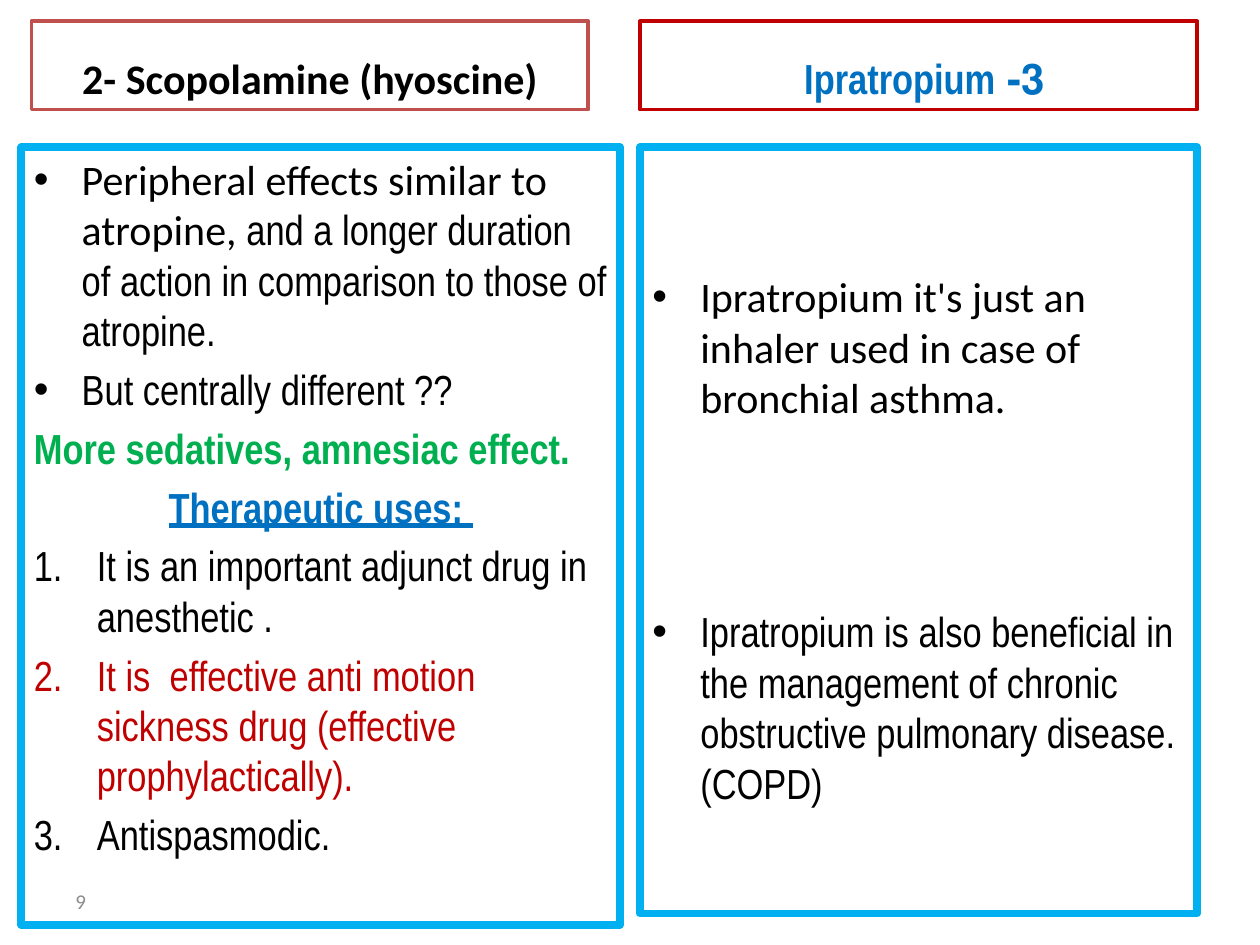
from dataclasses import dataclass

from lxml.etree import SubElement
from pptx import Presentation
from pptx.dml.color import RGBColor
from pptx.enum.shapes import MSO_SHAPE as Shape
from pptx.enum.text import MSO_ANCHOR as Anchor, PP_ALIGN as Align
from pptx.oxml.ns import qn
from pptx.util import Inches, Pt

COLORS = {"black": "000000", "blue": "0070C0", "green": "00B050", "red": "C00000",
          "sky": "00B0F0", "brick": "C0504D", "grey": "8C8C8C"}
NARROW, PLAIN = "Arial Narrow", "Calibri"


@dataclass
class Run:
    text: str
    font: str = NARROW
    color: str = "black"
    bold: bool = False
    underline: bool = False
    size: float = 24


class SlideBuilder:
    gap = 4.8
    indents = {"bullet": 0.38, "number": 0.5}

    def __init__(self, slide):
        self.slide = slide

    def frame(self, left, top, width, height, color, weight, anchor=Anchor.TOP, inset=0.05):
        """Add an unfilled outlined rectangle and return its text frame."""
        box = self.slide.shapes.add_shape(
            Shape.RECTANGLE, Inches(left), Inches(top), Inches(width), Inches(height))
        box.shadow.inherit = False
        box.fill.background()
        box.line.color.rgb = RGBColor.from_string(COLORS[color])
        box.line.width = Pt(weight)
        text = box.text_frame
        text.word_wrap = True
        text.vertical_anchor = anchor
        text.margin_top = Inches(inset)
        return text

    def header(self, left, color, run, right_to_left=False):
        text = self.frame(left, 0.17, 4.42, 0.7, color, 2.25, Anchor.BOTTOM)
        para = self.paragraph(text, [run], align=Align.CENTER)
        if right_to_left:
            para._p.get_or_add_pPr().set("rtl", "1")

    def paragraph(self, text, runs, marker=None, align=Align.LEFT, before=gap):
        first = text.paragraphs[0]
        para = text.add_paragraph() if first.runs else first
        para.alignment = align
        para.space_before = Pt(before)
        if marker:
            self.mark(para, marker)
        for run in runs:
            span = para.add_run()
            span.text = run.text
            font = span.font
            font.name, font.size = run.font, Pt(run.size)
            font.bold, font.underline = run.bold, run.underline
            font.color.rgb = RGBColor.from_string(COLORS[run.color])
        return para

    def mark(self, para, marker):
        """Give a paragraph a hanging bullet or an automatic number."""
        props = para._p.get_or_add_pPr()
        indent = Inches(self.indents[marker])
        props.set("marL", str(indent))
        props.set("indent", str(-indent))
        if marker == "bullet":
            SubElement(props, qn("a:buFont"), typeface="Arial")
            SubElement(props, qn("a:buChar"), char="•")
        else:
            SubElement(props, qn("a:buFont"), typeface="+mj-lt")
            SubElement(props, qn("a:buAutoNum"), type="arabicPeriod")

    def page_number(self, run):
        box = self.slide.shapes.add_textbox(
            Inches(0.5), Inches(6.95), Inches(2.33), Inches(0.4))
        text = box.text_frame
        text.word_wrap = True
        text.vertical_anchor = Anchor.MIDDLE
        self.paragraph(text, [run], before=0)


def main():
    deck = Presentation()
    deck.slide_width, deck.slide_height = Inches(10), Inches(7.5)
    page = SlideBuilder(deck.slides.add_slide(deck.slide_layouts[6]))

    page.header(0.25, "brick", Run("2- Scopolamine (hyoscine)", PLAIN, bold=True))
    scopolamine = page.frame(0.17, 1.17, 4.75, 6.17, "sky", 4.5)
    page.paragraph(scopolamine, [
        Run("Peripheral effects similar to atropine,", PLAIN),
        Run(" and a longer duration of action in comparison to those of atropine."),
    ], "bullet")
    page.paragraph(scopolamine, [Run("But centrally different ??")], "bullet")
    page.paragraph(scopolamine, [
        Run("More sedatives, amnesiac effect.", color="green", bold=True)])
    page.paragraph(scopolamine, [
        Run("Therapeutic uses: ", color="blue", bold=True, underline=True)],
        align=Align.CENTER)
    for use, color in [
        ("It is an important adjunct drug in anesthetic .", "black"),
        ("It is  effective anti motion sickness drug (effective prophylactically).", "red"),
        ("Antispasmodic.", "black"),
    ]:
        page.paragraph(scopolamine, [Run(use, color=color)], "number")

    page.header(5.08, "red", Run("3- Ipratropium ", color="blue", bold=True),
                right_to_left=True)
    ipratropium = page.frame(5.08, 1.17, 4.42, 6.08, "sky", 4.5, inset=0.98)
    page.paragraph(ipratropium, [
        Run("Ipratropium it's just an inhaler used in case of bronchial asthma.", PLAIN)],
        "bullet")
    page.paragraph(ipratropium, [
        Run("Ipratropium is also beneficial in the management of chronic "
            "obstructive pulmonary disease.(COPD)")],
        "bullet", before=105)

    page.page_number(Run("9", PLAIN, "grey", size=12))
    deck.save("out.pptx")


if __name__ == "__main__":
    main()
